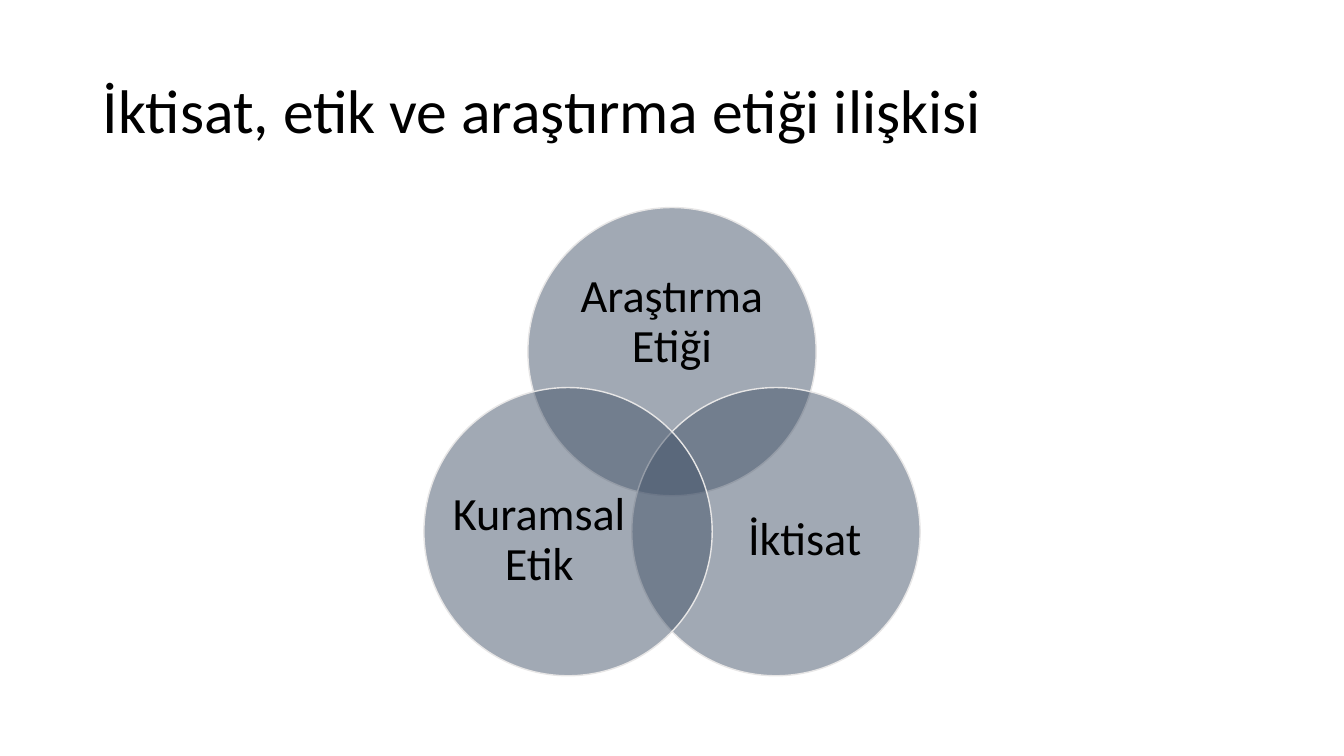
from math import cos, radians, sin

from lxml.etree import SubElement
from pptx import Presentation
from pptx.dml.color import RGBColor
from pptx.enum.shapes import MSO_SHAPE
from pptx.enum.text import MSO_ANCHOR, PP_ALIGN
from pptx.oxml.ns import qn
from pptx.util import Inches, Pt

SLIDE_WIDTH, SLIDE_HEIGHT = 13.33, 7.5
COLUMNS = 100  # square grid cells, counted across the slide


def colour(hex_code):
    return RGBColor.from_string(hex_code)


def cells(count):
    return Inches(count * SLIDE_WIDTH / COLUMNS)


class VennSlide:
    font = "Calibri"
    ink = "000000"
    disc = "44546A"
    rim = "E7E6E6"
    opacity = 50

    def __init__(self, deck):
        self.slide = deck.slides.add_slide(deck.slide_layouts[6])
        self.group = None

    def text(self, shapes, wording, box, size, align, margins):
        label = shapes.add_textbox(*map(cells, box))
        frame = label.text_frame
        frame.text = wording
        frame.word_wrap = True
        frame.vertical_anchor = MSO_ANCHOR.MIDDLE
        frame.margin_left = frame.margin_right = Inches(margins[0])
        frame.margin_top = frame.margin_bottom = Inches(margins[1])
        paragraph = frame.paragraphs[0]
        paragraph.alignment = align
        paragraph.line_spacing = 0.9
        for run in paragraph.runs:
            run.font.name = self.font
            run.font.size = Pt(size)
            run.font.color.rgb = colour(self.ink)

    def title(self, wording, box):
        self.text(self.slide.shapes, wording, box, 44, PP_ALIGN.LEFT, (0.1, 0.05))

    def start_venn(self):
        self.group = self.slide.shapes.add_group_shape()

    def circle(self, centre_x, centre_y, diameter):
        box = (centre_x - diameter / 2, centre_y - diameter / 2, diameter, diameter)
        circle = self.group.shapes.add_shape(MSO_SHAPE.OVAL, *map(cells, box))
        circle.shadow.inherit = False
        circle.fill.solid()
        circle.fill.fore_color.rgb = colour(self.disc)
        tint = circle.fill._xPr.find(".//" + qn("a:srgbClr"))
        SubElement(tint, qn("a:alpha"), val=str(self.opacity * 1000))
        circle.line.color.rgb = colour(self.rim)
        circle.line.width = Pt(1)

    def circle_label(self, wording, centre_x, centre_y, width, height):
        box = (centre_x - width / 2, centre_y - height / 2, width, height)
        self.text(self.group.shapes, wording, box, 33, PP_ALIGN.CENTER, (0, 0))


def main():
    deck = Presentation()
    deck.slide_width, deck.slide_height = Inches(SLIDE_WIDTH), Inches(SLIDE_HEIGHT)
    venn = VennSlide(deck)

    # Title
    venn.title("İktisat, etik ve araştırma etiği ilişkisi", (6.9, 3, 86.25, 10.88))

    # Three circles spaced evenly around a common centre;
    # label shifts and sizes are shares of the diameter
    centre_x, centre_y, ring, diameter = 50, 35.1, 8.93, 21.45
    fields = [
        ("Araştırma Etiği", (0, -0.1), (0.73, 0.45)),
        ("İktisat", (0.1, 0.03), (0.6, 0.55)),
        ("Kuramsal Etik", (-0.1, 0.03), (0.6, 0.55)),
    ]
    venn.start_venn()
    for index, (field, shift, size) in enumerate(fields):
        angle = radians(index * 360 / len(fields) - 90)
        x, y = centre_x + ring * cos(angle), centre_y + ring * sin(angle)
        venn.circle(x, y, diameter)
        venn.circle_label(field, x + shift[0] * diameter, y + shift[1] * diameter,
                          size[0] * diameter, size[1] * diameter)

    deck.save("out.pptx")


if __name__ == "__main__":
    main()
